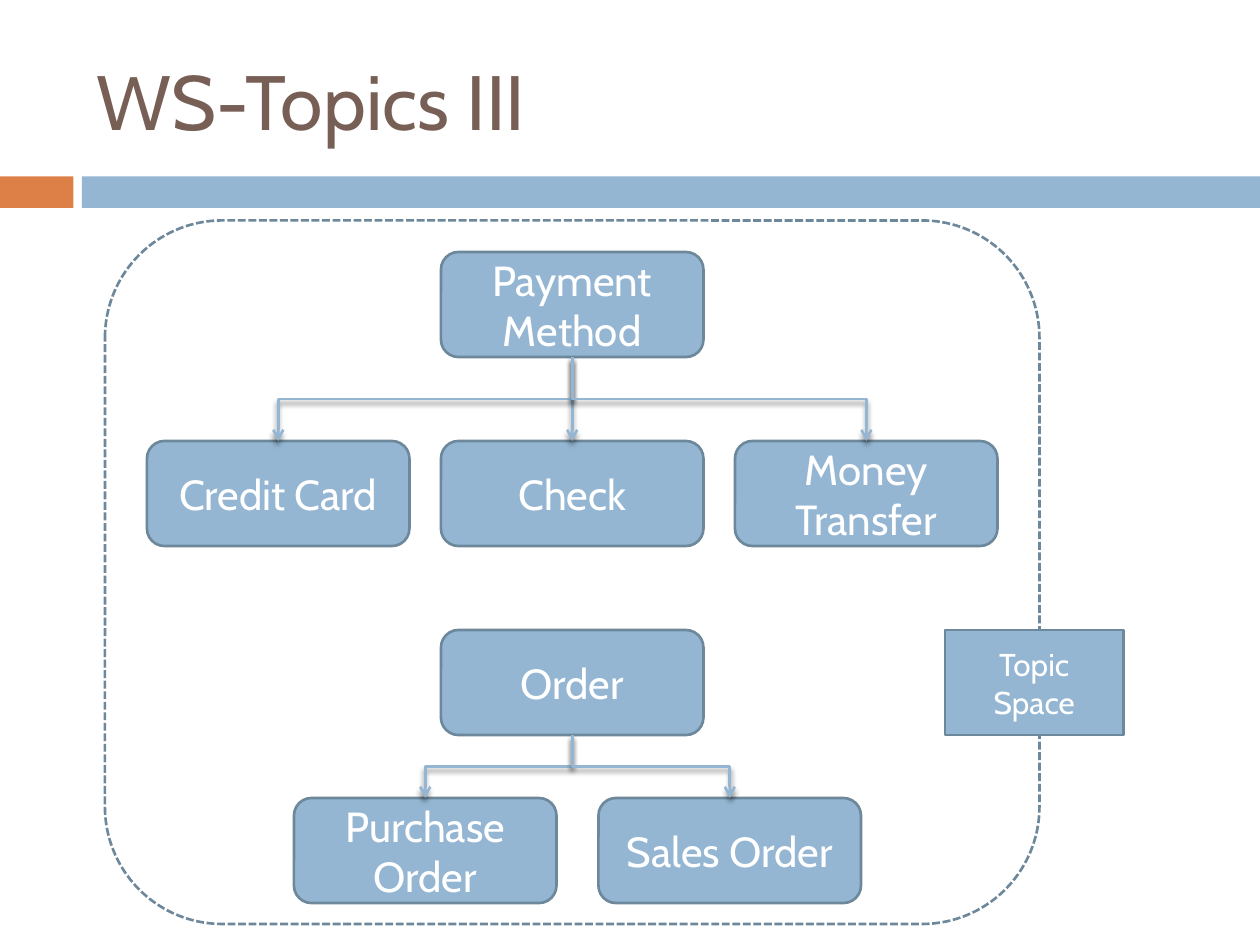
from lxml import etree
from pptx import Presentation
from pptx.dml.color import RGBColor
from pptx.enum.dml import MSO_LINE
from pptx.enum.shapes import MSO_CONNECTOR, MSO_SHAPE
from pptx.enum.text import MSO_ANCHOR, PP_ALIGN
from pptx.oxml import parse_xml
from pptx.oxml.ns import nsdecls, qn
from pptx.util import Inches, Pt

RECTANGLE, ROUNDED = MSO_SHAPE.RECTANGLE, MSO_SHAPE.ROUNDED_RECTANGLE
STRAIGHT, ELBOW = MSO_CONNECTOR.STRAIGHT, MSO_CONNECTOR.ELBOW
DASHED = MSO_LINE.SQUARE_DOT
MIDDLE = MSO_ANCHOR.MIDDLE
LEFT, CENTER = PP_ALIGN.LEFT, PP_ALIGN.CENTER

BLUE = RGBColor(0x94, 0xB6, 0xD2)
DARK_BLUE = RGBColor(0x6D, 0x87, 0x9B)
ORANGE = RGBColor(0xDD, 0x80, 0x47)
BROWN = RGBColor(0x77, 0x5F, 0x55)
WHITE = RGBColor(0xFF, 0xFF, 0xFF)
FONT = "Cabin"
BOX_WIDTH, BOX_HEIGHT = 25, 10
SHADOW = (
    f'<a:effectLst {nsdecls("a")}>'
    '<a:outerShdw blurRad="38100" dist="30480" dir="5400000" rotWithShape="0">'
    '<a:srgbClr val="000000"><a:alpha val="45000"/></a:srgbClr>'
    '</a:outerShdw></a:effectLst>'
)

presentation = Presentation()
presentation.slide_width = Inches(10)
presentation.slide_height = Inches(7.5)
UNIT = presentation.slide_width / 120
slide = presentation.slides.add_slide(presentation.slide_layouts[5])


def add_box(kind, column, row, width, height, fill, outline=None, text="", size=24):
    shape = slide.shapes.add_shape(
        kind, *(round(value * UNIT) for value in (column, row, width, height)))
    shape.shadow.inherit = False
    shape.fill.solid()
    shape.fill.fore_color.rgb = fill
    if outline is None:
        shape.line.fill.background()
    else:
        shape.line.color.rgb = outline
        shape.line.width = Pt(1.5)
    if text:
        shape.text_frame.text = text
        shape.text_frame.word_wrap = True
        shape.text_frame.vertical_anchor = MIDDLE
        paragraph = shape.text_frame.paragraphs[0]
        paragraph.alignment = CENTER
        paragraph.font.name = FONT
        paragraph.font.size = Pt(size)
        paragraph.font.color.rgb = WHITE
    return shape


def add_arrow(parent, child):
    start = parent.left + parent.width // 2
    end = child.left + child.width // 2
    top, bottom = parent.top + parent.height, child.top
    kind = STRAIGHT if start == end else ELBOW
    connector = slide.shapes.add_connector(kind, start, top, end, bottom)
    connector.begin_connect(parent, 2)
    connector.end_connect(child, 0)
    properties = connector._element.spPr
    if kind == ELBOW:
        drop, span = bottom - top, abs(end - start)
        connector.left = (start + end - drop) // 2
        connector.top = (top + bottom - span) // 2
        connector.width, connector.height = drop, span
        transform = properties.find(qn("a:xfrm"))
        transform.set("rot", "5400000" if end < start else "16200000")
        transform.set("flipH", "0" if end < start else "1")
    connector.line.color.rgb = BLUE
    connector.line.width = Pt(1.5)
    etree.SubElement(properties.find(qn("a:ln")), qn("a:tailEnd"), type="arrow")
    properties.append(parse_xml(SHADOW))


add_box(RECTANGLE, 0, 16.8, 7, 3, ORANGE)
add_box(RECTANGLE, 7.8, 16.8, 112.2, 3, BLUE)
topic_space = add_box(ROUNDED, 10, 21, 89, 67, WHITE, DARK_BLUE)
topic_space.line.dash_style = DASHED

title = slide.shapes.title
title.left, title.top, title.width, title.height = (
    round(value * UNIT) for value in (8, 3, 107, 13))
title.text_frame.text = "WS-Topics III"
title.text_frame.vertical_anchor = MIDDLE
paragraph = title.text_frame.paragraphs[0]
paragraph.alignment = LEFT
paragraph.font.name = FONT
paragraph.font.size = Pt(44)
paragraph.font.color.rgb = BROWN

topic_trees = [
    ("Payment Method", 24, 42, [("Check", 42), ("Credit Card", 14), ("Money Transfer", 70)]),
    ("Order", 60, 76, [("Purchase Order", 28), ("Sales Order", 57)]),
]
for root_text, root_row, child_row, children in topic_trees:
    root = add_box(ROUNDED, 42, root_row, BOX_WIDTH, BOX_HEIGHT, BLUE, DARK_BLUE, root_text)
    topics = [
        add_box(ROUNDED, column, child_row, BOX_WIDTH, BOX_HEIGHT, BLUE, DARK_BLUE, text)
        for text, column in children
    ]
    for topic in topics:
        add_arrow(root, topic)

add_box(RECTANGLE, 90, 60, 17, BOX_HEIGHT, BLUE, DARK_BLUE, "Topic Space", 18)

presentation.save("out.pptx")
